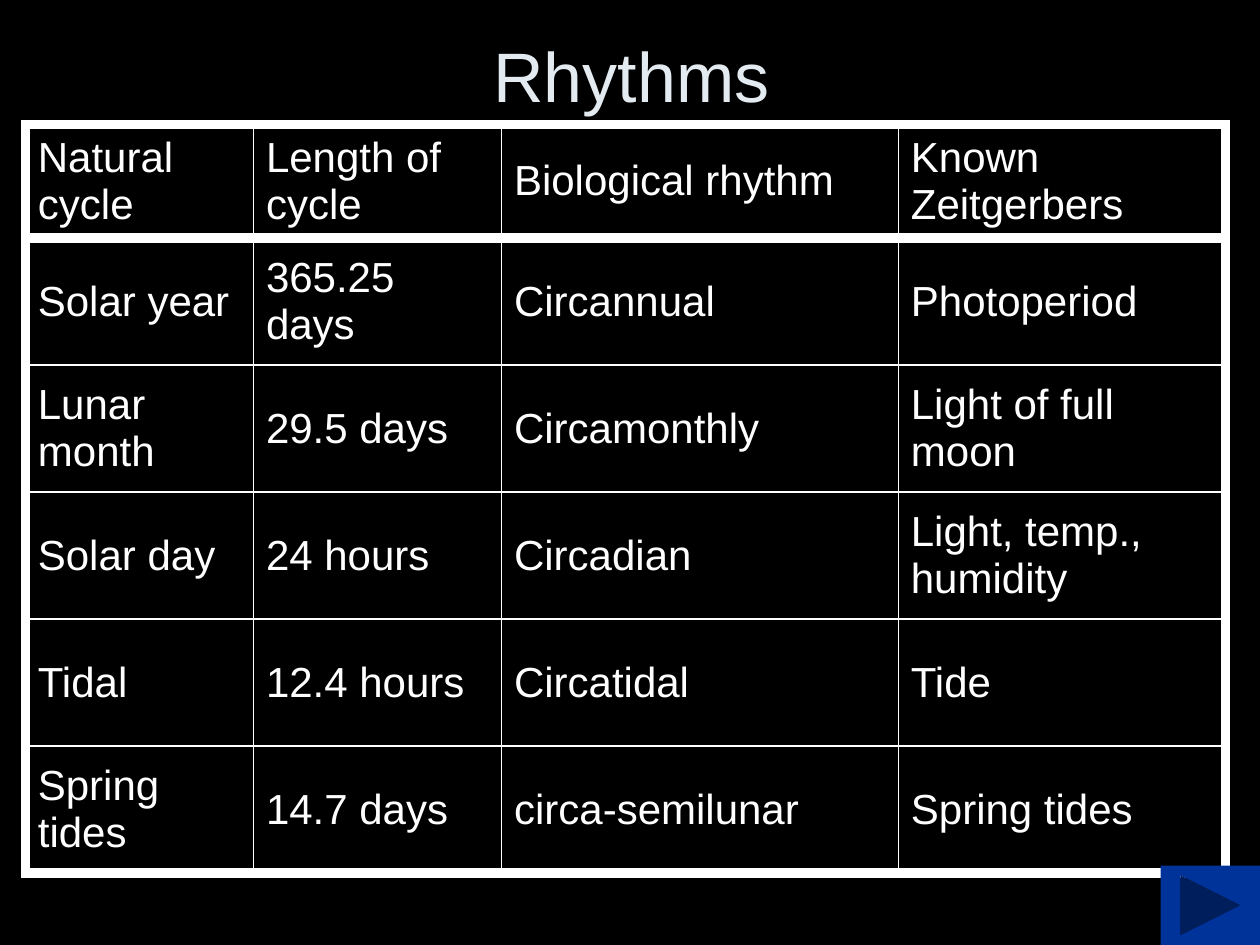
from lxml.etree import SubElement
from pptx import Presentation
from pptx.dml.color import RGBColor
from pptx.enum.shapes import MSO_SHAPE
from pptx.enum.text import MSO_ANCHOR, MSO_AUTO_SIZE, PP_ALIGN
from pptx.oxml import parse_xml
from pptx.oxml.ns import nsdecls, qn
from pptx.util import Cm, Pt

ROWS = [
    ["Natural cycle", "Length of cycle", "Biological rhythm", "Known Zeitgerbers"],
    ["Solar year", "365.25 days", "Circannual", "Photoperiod"],
    ["Lunar month", "29.5 days", "Circamonthly", "Light of full moon"],
    ["Solar day", "24 hours", "Circadian", "Light, temp., humidity"],
    ["Tidal", "12.4 hours", "Circatidal", "Tide"],
    ["Spring tides", "14.7 days", "circa-semilunar", "Spring tides"],
]
COLUMN_WIDTHS = [4.6, 5, 8, 6.6]
ROW_HEIGHTS = [2.29] + [2.56] * 5


def color(value):
    return RGBColor.from_string(value)


class SlideBuilder:
    font = "Arial"
    background = "000000"
    text_color = "FFFFFF"
    title_color = "E3EBF1"
    button_color = "003399"
    thick = 6
    thin = 1

    def __init__(self, deck):
        self.slide = deck.slides.add_slide(deck.slide_layouts[5])
        fill = self.slide.background.fill
        fill.solid()
        fill.fore_color.rgb = color(self.background)

    def format_text(self, para, size, text_color):
        for span in para.runs:
            span.font.name = self.font
            span.font.size = Pt(size)
            span.font.color.rgb = color(text_color)

    def add_title(self, text, left, top, width, height):
        title = self.slide.shapes.title
        title.left, title.top = Cm(left), Cm(top)
        title.width, title.height = Cm(width), Cm(height)
        frame = title.text_frame
        frame.text = text
        frame.auto_size = MSO_AUTO_SIZE.NONE
        frame.vertical_anchor = MSO_ANCHOR.MIDDLE
        para = frame.paragraphs[0]
        para.alignment = PP_ALIGN.CENTER
        self.format_text(para, 40, self.title_color)

    def add_table(self, rows, left, top, widths, heights):
        table = self.slide.shapes.add_table(
            len(rows), len(widths), Cm(left), Cm(top), Cm(sum(widths)), Cm(sum(heights))
        ).table
        table.first_row = table.horz_banding = False
        for column, width in zip(table.columns, widths):
            column.width = Cm(width)
        for row, height in zip(table.rows, heights):
            row.height = Cm(height)
        last_row, last_column = len(rows) - 1, len(widths) - 1
        for i, texts in enumerate(rows):
            for j, text in enumerate(texts):
                cell = table.cell(i, j)
                self.fill_cell(cell, text)
                heavy = {
                    "lnL": j == 0,
                    "lnR": j == last_column,
                    "lnT": i <= 1,
                    "lnB": i in (0, last_row),
                }
                self.set_borders(cell, heavy)

    def fill_cell(self, cell, text):
        cell.text = text
        cell.fill.background()
        cell.vertical_anchor = MSO_ANCHOR.MIDDLE
        para = cell.text_frame.paragraphs[0]
        para.alignment = PP_ALIGN.LEFT
        spacing = SubElement(para._p.get_or_add_pPr(), qn("a:spcBef"))
        SubElement(spacing, qn("a:spcPct")).set("val", "20000")
        self.format_text(para, 24, self.text_color)

    def set_borders(self, cell, heavy):
        properties = cell._tc.get_or_add_tcPr()
        for position, (side, is_heavy) in enumerate(heavy.items()):
            width = Pt(self.thick if is_heavy else self.thin)
            border = parse_xml(
                f'<a:{side} {nsdecls("a")} w="{width}"><a:solidFill>'
                f'<a:srgbClr val="{self.text_color}"/></a:solidFill></a:{side}>'
            )
            properties.insert(position, border)

    def add_next_button(self, left, top, width, height):
        button = self.slide.shapes.add_shape(
            MSO_SHAPE.ACTION_BUTTON_FORWARD_OR_NEXT,
            Cm(left), Cm(top), Cm(width), Cm(height),
        )
        button.shadow.inherit = False
        button.fill.solid()
        button.fill.fore_color.rgb = color(self.button_color)
        button.line.fill.background()


def main():
    deck = Presentation()
    deck.slide_width, deck.slide_height = Cm(25.4), Cm(19.05)
    builder = SlideBuilder(deck)
    builder.add_title("Rhythms", 1.3, 0.71, 22.86, 1.6)
    builder.add_table(ROWS, 0.51, 2.51, COLUMN_WIDTHS, ROW_HEIGHTS)
    builder.add_next_button(23.4, 17.45, 2, 1.6)
    deck.save("out.pptx")


if __name__ == "__main__":
    main()
